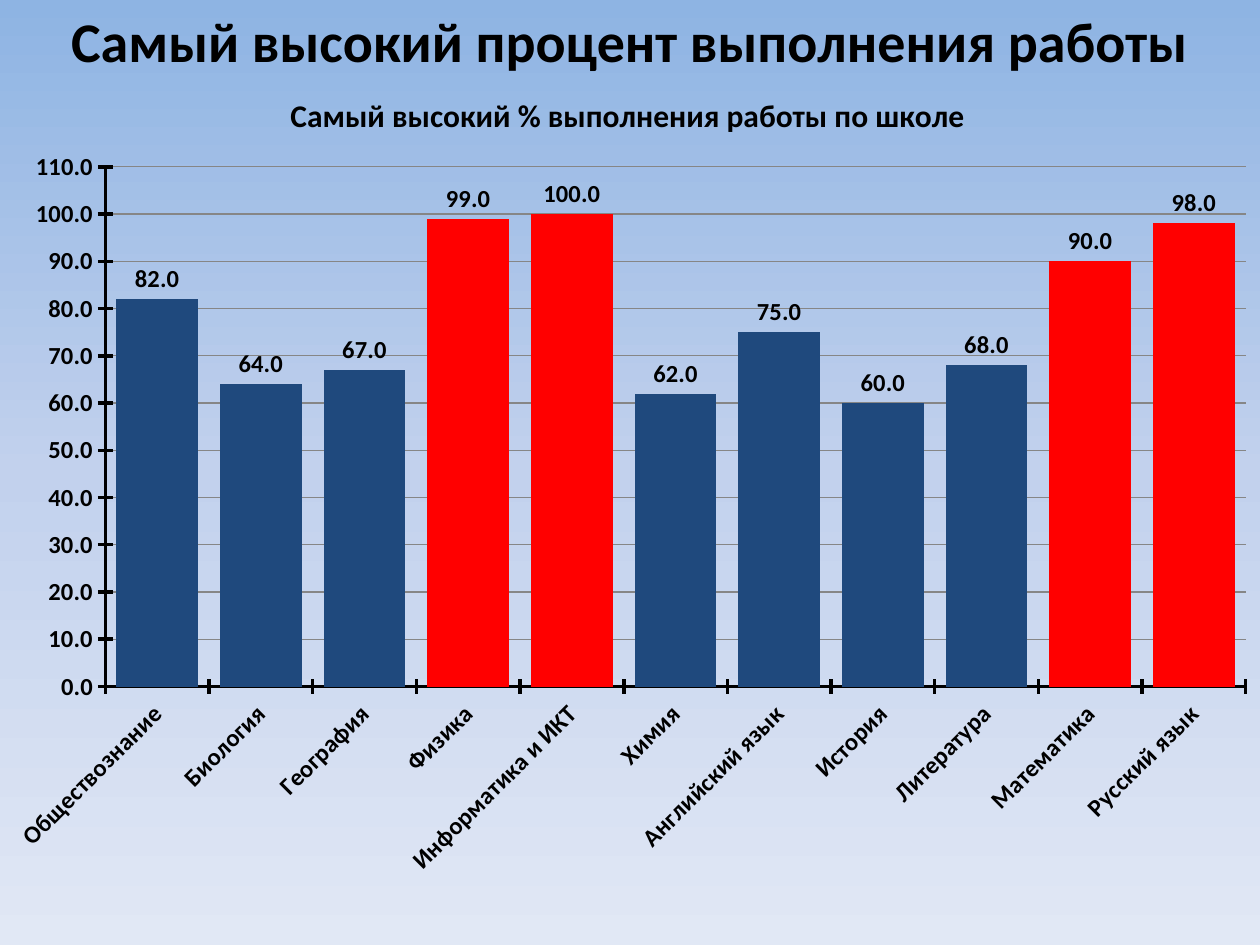
import copy
from dataclasses import dataclass

import lxml.etree
import pptx
import pptx.chart.data
import pptx.dml.color
import pptx.enum.chart
import pptx.enum.text
import pptx.oxml.ns
import pptx.util

Cm = pptx.util.Cm
Pt = pptx.util.Pt
qn = pptx.oxml.ns.qn
enum = pptx.enum.chart


@dataclass
class Theme:
    font: str = "Calibri"
    ink: str = "000000"
    bar: str = "1F497D"
    high: str = "FF0000"
    grid: str = "868686"
    sky: tuple = ((0, "8EB4E3"), (0.5, "C2D1ED"), (1, "E1E8F5"))
    head: int = 32
    title: int = 18
    label: int = 14


def color(code):
    return pptx.dml.color.RGBColor.from_string(code)


def place(parent, index, **spots):
    layout = parent.find(qn("c:layout"))
    if layout is None:
        layout = lxml.etree.Element(qn("c:layout"))
        parent.insert(index, layout)
    for child in list(layout):
        layout.remove(child)
    manual = lxml.etree.SubElement(layout, qn("c:manualLayout"))
    for name, value in spots.items():
        lxml.etree.SubElement(manual, qn("c:" + name)).set("val", str(value))


class Maker:
    def __init__(self, theme, slide):
        self.theme = theme
        self.slide = slide

    def style(self, font, size):
        font.name = self.theme.font
        font.size = Pt(size)
        font.bold = True
        font.color.rgb = color(self.theme.ink)

    def back(self):
        fill = self.slide.background.fill
        fill.gradient()
        fill.gradient_angle = 270
        stops = self.slide.background._cSld.find(".//" + qn("a:gsLst"))
        stops.insert(1, copy.deepcopy(stops[0]))
        for stop, (spot, code) in zip(fill.gradient_stops, self.theme.sky):
            stop.position = spot
            stop.color.rgb = color(code)

    def text(self, words, left, top, width, height):
        box = self.slide.shapes.add_textbox(Cm(left), Cm(top), Cm(width), Cm(height))
        box.text_frame.word_wrap = True
        box.text_frame.auto_size = pptx.enum.text.MSO_AUTO_SIZE.SHAPE_TO_FIT_TEXT
        line = box.text_frame.paragraphs[0]
        line.text = words
        line.alignment = pptx.enum.text.PP_ALIGN.CENTER
        self.style(line.font, self.theme.head)

    def axis(self, axis):
        axis.major_tick_mark = enum.XL_TICK_MARK.CROSS
        axis.minor_tick_mark = enum.XL_TICK_MARK.NONE
        axis.format.line.color.rgb = color(self.theme.ink)
        axis.format.line.width = Pt(2)
        self.style(axis.tick_labels.font, self.theme.label)

    def chart(self, title, marks, limit, left, top, width, height):
        data = pptx.chart.data.CategoryChartData(number_format="0.0")
        data.categories = list(marks)
        data.add_series(title, list(marks.values()))
        chart = self.slide.shapes.add_chart(
            enum.XL_CHART_TYPE.COLUMN_CLUSTERED,
            Cm(left), Cm(top), Cm(width), Cm(height), data).chart
        chart.has_legend = False
        chart.font.name = self.theme.font
        chart.font.size = Pt(10)

        chart.has_title = True
        line = chart.chart_title.text_frame.paragraphs[0]
        line.text = title
        self.style(line.font, self.theme.title)
        place(chart.chart_title._element, 1, xMode="edge", yMode="edge", x=0.23, y=0.04)
        place(chart._chartSpace.chart.plotArea, 0, layoutTarget="inner",
              xMode="edge", yMode="edge", x=0.09, y=0.134, w=0.89, h=0.62)

        names, scale = chart.category_axis, chart.value_axis
        self.axis(names)
        self.axis(scale)
        names._element.find(qn("c:txPr")).find(qn("a:bodyPr")).set("rot", "-2700000")
        scale.minimum_scale = 0
        scale.maximum_scale = 110
        scale.major_unit = 10
        scale.tick_labels.number_format = "0.0"
        scale.tick_labels.number_format_is_linked = False
        scale.major_gridlines.format.line.color.rgb = color(self.theme.grid)
        scale.major_gridlines.format.line.width = Pt(0.75)

        plot = chart.plots[0]
        plot.gap_width = 27
        plot.vary_by_categories = False
        series = plot.series[0]
        self.fill(series)
        for index, value in enumerate(marks.values()):
            if value >= limit:
                self.fill(series.points[index], self.theme.high)
        labels = series.data_labels
        labels.show_value = True
        labels.number_format = "0.0"
        labels.number_format_is_linked = False
        labels.position = enum.XL_LABEL_POSITION.OUTSIDE_END
        self.style(labels.font, self.theme.label)

    def fill(self, bar, code=None):
        bar.format.fill.solid()
        bar.format.fill.fore_color.rgb = color(code or self.theme.bar)


def main():
    deck = pptx.Presentation()
    deck.slide_width = Cm(25.4)
    deck.slide_height = Cm(19.05)
    maker = Maker(Theme(), deck.slides.add_slide(deck.slide_layouts[6]))
    marks = {
        "Обществознание": 82,
        "Биология": 64,
        "География": 67,
        "Физика": 99,
        "Информатика и ИКТ": 100,
        "Химия": 62,
        "Английский язык": 75,
        "История": 60,
        "Литература": 68,
        "Математика": 90,
        "Русский язык": 98,
    }
    maker.back()
    maker.text("Самый высокий процент выполнения работы", 0, 0, 25.4, 1.62)
    maker.chart("Самый высокий % выполнения работы по школе", marks, 90,
                -0.2, 1.1, 25.83, 16.9)
    deck.save("out.pptx")


if __name__ == "__main__":
    main()
